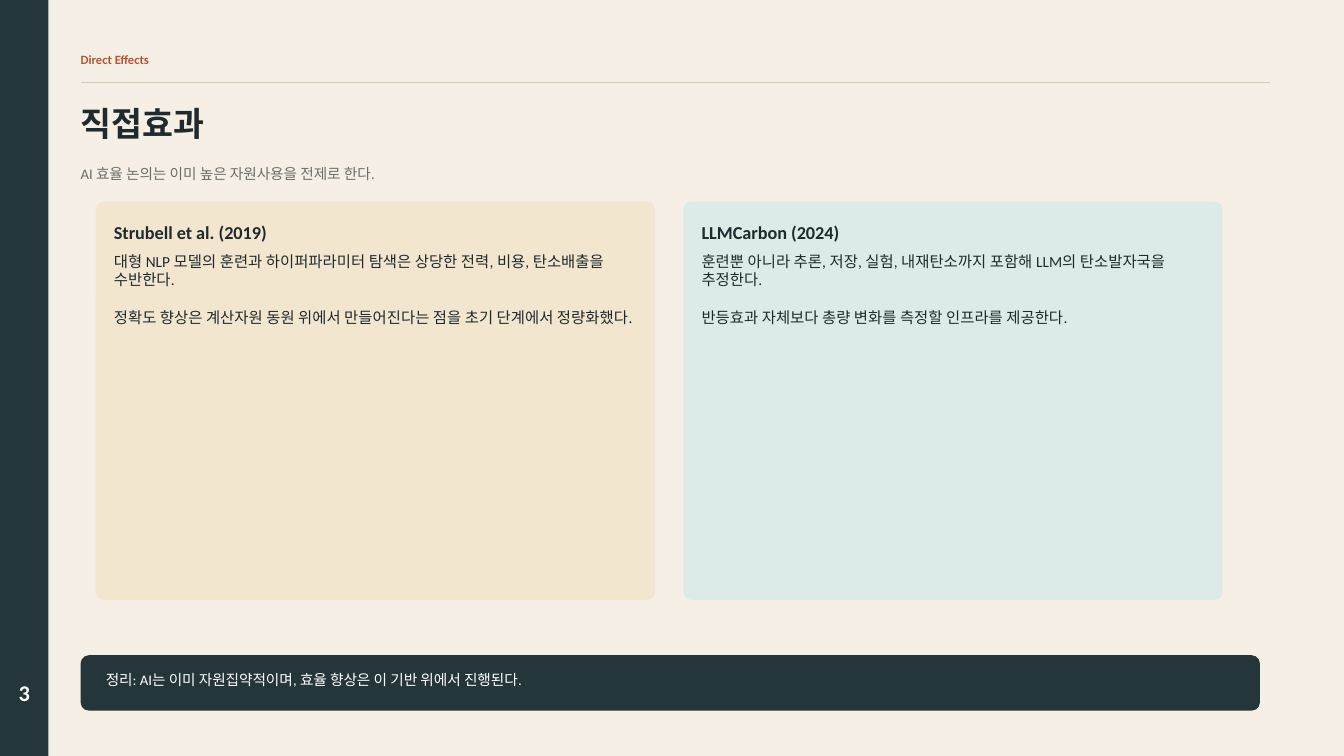
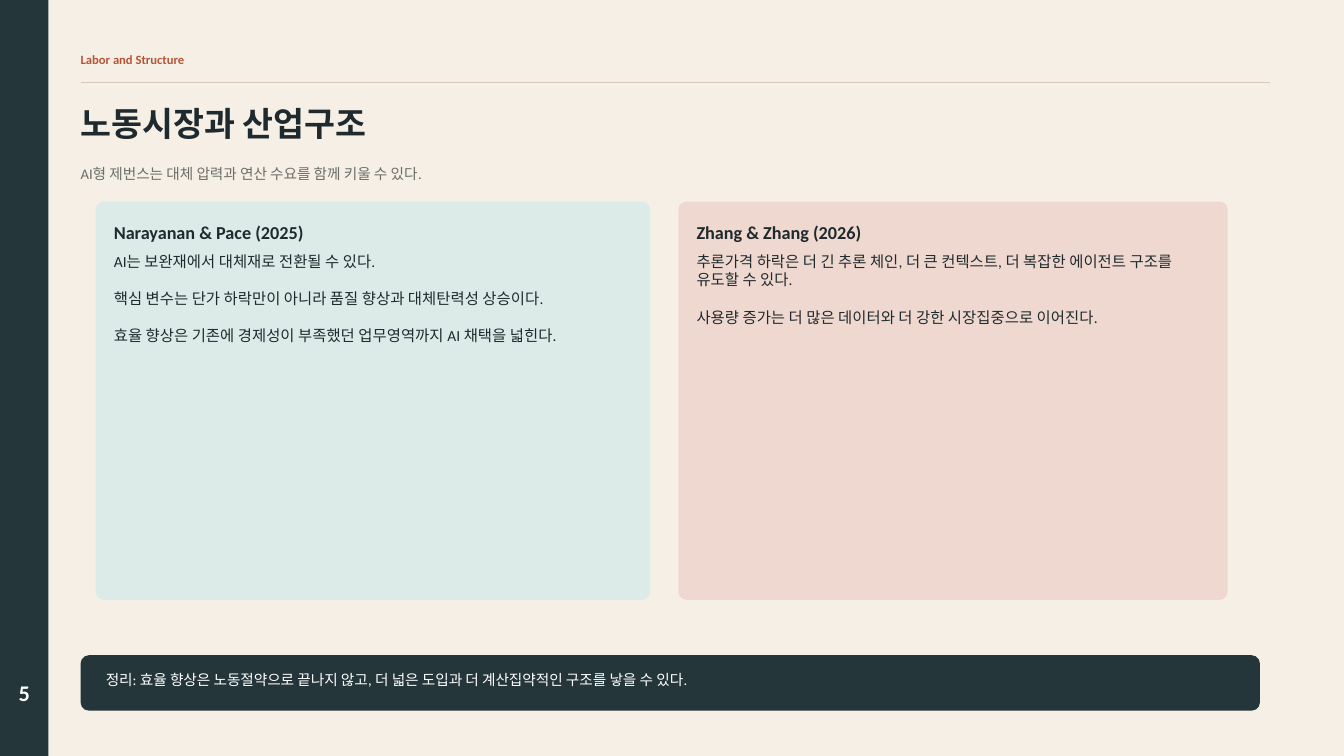
from pptx import Presentation
from pptx.dml.color import RGBColor
from pptx.enum.shapes import MSO_CONNECTOR, MSO_SHAPE
from pptx.enum.text import MSO_ANCHOR, MSO_AUTO_SIZE, PP_ALIGN
from pptx.oxml.ns import qn
from pptx.util import Pt
from lxml import etree

FONT = "Calibri"
PAPER = RGBColor(0xF5, 0xEF, 0xE5)
DARK = RGBColor(0x24, 0x36, 0x3A)
INK = RGBColor(0x1F, 0x2A, 0x2E)
GRAY = RGBColor(0x6B, 0x6E, 0x69)
RUST = RGBColor(0xB7, 0x54, 0x37)
RULE = RGBColor(0xD8, 0xC9, 0xB5)
WHITE = RGBColor(0xFF, 0xFF, 0xFF)
SAND = RGBColor(0xF2, 0xE6, 0xCF)
MINT = RGBColor(0xDC, 0xEB, 0xE8)
ROSE = RGBColor(0xEF, 0xD8, 0xCF)

WIDTH, HEIGHT = 960, 540
LEFT = 57.6
CARD_LEFT, CARD_TOP, CARD_HEIGHT = 68.4, 144, 284.4
CARD_GAP, CARD_PAD = 20.16, 12.96

SLIDES = [
    {
        "number": "3",
        "section": "Direct Effects",
        "title": "직접효과",
        "subtitle": "AI 효율 논의는 이미 높은 자원사용을 전제로 한다.",
        "cards": [
            (399.6, SAND, "Strubell et al. (2019)", [
                "대형 NLP 모델의 훈련과 하이퍼파라미터 탐색은 상당한 전력, 비용, 탄소배출을 수반한다.",
                "정확도 향상은 계산자원 동원 위에서 만들어진다는 점을 초기 단계에서 정량화했다.",
            ]),
            (385.2, MINT, "LLMCarbon (2024)", [
                "훈련뿐 아니라 추론, 저장, 실험, 내재탄소까지 포함해 LLM의 탄소발자국을 추정한다.",
                "반등효과 자체보다 총량 변화를 측정할 인프라를 제공한다.",
            ]),
        ],
        "summary": "정리: AI는 이미 자원집약적이며, 효율 향상은 이 기반 위에서 진행된다.",
    },
    {
        "number": "5",
        "section": "Labor and Structure",
        "title": "노동시장과 산업구조",
        "subtitle": "AI형 제번스는 대체 압력과 연산 수요를 함께 키울 수 있다.",
        "cards": [
            (396, MINT, "Narayanan & Pace (2025)", [
                "AI는 보완재에서 대체재로 전환될 수 있다.",
                "핵심 변수는 단가 하락만이 아니라 품질 향상과 대체탄력성 상승이다.",
                "효율 향상은 기존에 경제성이 부족했던 업무영역까지 AI 채택을 넓힌다.",
            ]),
            (392.4, ROSE, "Zhang & Zhang (2026)", [
                "추론가격 하락은 더 긴 추론 체인, 더 큰 컨텍스트, 더 복잡한 에이전트 구조를 유도할 수 있다.",
                "사용량 증가는 더 많은 데이터와 더 강한 시장집중으로 이어진다.",
            ]),
        ],
        "summary": "정리: 효율 향상은 노동절약으로 끝나지 않고, 더 넓은 도입과 더 계산집약적인 구조를 낳을 수 있다.",
    },
]


def add_panel(s, box, color, radius=None):
    """Add a filled rectangle, with rounded corners if a radius ratio is given."""
    kind = MSO_SHAPE.RECTANGLE if radius is None else MSO_SHAPE.ROUNDED_RECTANGLE
    sp = s.shapes.add_shape(kind, *map(Pt, box))
    if radius is not None:
        sp.adjustments[0] = radius
    sp.shadow.inherit = False
    sp.fill.solid()
    sp.fill.fore_color.rgb = color
    sp.line.fill.background()


def add_text(s, box, texts, size, color, bold=False, align=PP_ALIGN.LEFT,
             anchor=MSO_ANCHOR.MIDDLE, sp=None):
    """Write paragraphs into a new text box, or into the placeholder sp."""
    if sp is None:
        sp = s.shapes.add_textbox(*map(Pt, box))
    else:
        sp.left, sp.top, sp.width, sp.height = map(Pt, box)
    tf = sp.text_frame
    tf.word_wrap = True
    tf.auto_size = MSO_AUTO_SIZE.NONE
    tf.vertical_anchor = anchor
    tf.margin_left = tf.margin_top = tf.margin_right = tf.margin_bottom = 0
    for i, text in enumerate(texts):
        p = tf.add_paragraph() if i else tf.paragraphs[0]
        p.text = text
        p.alignment = align
        p.space_before = Pt(13.4 if i else 0)
        p.font.name = FONT
        p.font.size = Pt(size)
        p.font.bold = bold
        p.font.color.rgb = color


prs = Presentation()
prs.slide_width, prs.slide_height = Pt(WIDTH), Pt(HEIGHT)
background = prs.slide_master.background.fill
background.solid()
background.fore_color.rgb = PAPER

for data in SLIDES:
    s = prs.slides.add_slide(prs.slide_layouts[5])

    # Sidebar and header
    add_panel(s, (0, 0, 34.56, HEIGHT), DARK)
    add_text(s, (5.76, 482.4, 23.04, 25.2), [data["number"]], 16, WHITE, True,
             PP_ALIGN.CENTER)
    add_text(s, (LEFT, 32.4, 302.4, 20.16), [data["section"]], 9, RUST, True)
    rule = s.shapes.add_connector(MSO_CONNECTOR.STRAIGHT, Pt(LEFT), Pt(59.04),
                                  Pt(907.2), Pt(59.04))
    rule.line.color.rgb = RULE
    rule.line.width = Pt(1.2)
    etree.SubElement(rule._element.spPr, qn("a:effectLst"))
    add_text(s, (LEFT, 68.4, 568.8, 39.6), [data["title"]], 24, INK, True,
             sp=s.shapes.title)
    add_text(s, (LEFT, 111.6, 633.6, 25.2), [data["subtitle"]], 10.5, GRAY)

    # Cards, placed from left to right
    x = CARD_LEFT
    for width, color, heading, body in data["cards"]:
        add_panel(s, (x, CARD_TOP, width, CARD_HEIGHT), color, 0.02)
        text_left, text_width = x + CARD_PAD, width - 2 * CARD_PAD
        add_text(s, (text_left, CARD_TOP + 11.52, text_width, 20.16), [heading],
                 13, INK, True)
        add_text(s, (text_left, CARD_TOP + 36, text_width, 238.32), body,
                 11, INK, anchor=MSO_ANCHOR.TOP)
        x += width + CARD_GAP

    # Summary banner
    add_panel(s, (LEFT, 468, 842.4, 39.6), DARK, 0.15)
    add_text(s, (LEFT + 18, 478.08, 806.4, 14.4), [data["summary"]], 10.5, WHITE)

prs.save("out.pptx")
